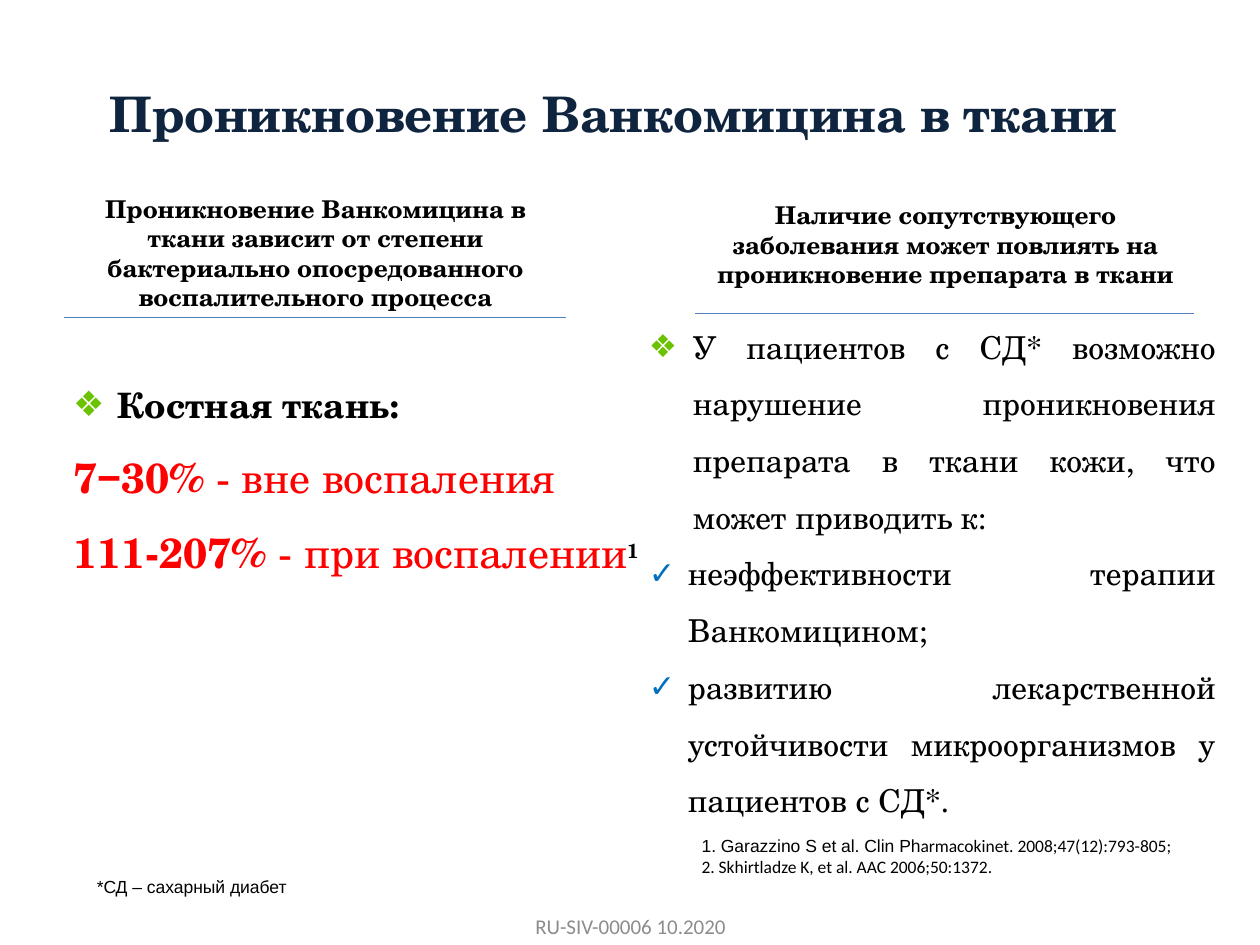
from dataclasses import dataclass, field

from lxml.etree import SubElement
from pptx import Presentation
from pptx.dml.color import RGBColor
from pptx.enum.shapes import MSO_CONNECTOR
from pptx.enum.text import MSO_ANCHOR as ANCHOR, PP_ALIGN as ALIGN
from pptx.oxml.ns import qn
from pptx.util import Inches, Pt

NAVY = RGBColor(0x0F, 0x24, 0x3E)
BLACK = RGBColor(0, 0, 0)
RED = RGBColor(0xFF, 0, 0)
GRAY = RGBColor(0x8C, 0x8C, 0x8C)
GREEN = RGBColor(0x6B, 0xC2, 0x00)
BLUE = RGBColor(0x00, 0x70, 0xC0)
RULE = RGBColor(0x4F, 0x81, 0xBD)
SERIF, ARIAL, CALIBRI = "TeX Gyre Schola", "Arial", "Calibri"


@dataclass
class Run:
    text: str
    size: float
    font: str = SERIF
    color: RGBColor = BLACK
    bold: bool = False
    superscript: bool = False


@dataclass
class Para:
    runs: list[Run]
    format: dict = field(default_factory=dict)
    margin: float = 0
    indent: float = 0
    bullet: str = ""
    bullet_color: RGBColor = GREEN


@dataclass
class Box:
    at: tuple[float, float, float, float]
    paras: list[Para]
    insets: tuple[float, float, float, float] = (0.1, 0.05, 0.1, 0.05)
    anchor: ANCHOR = ANCHOR.TOP


def add_run(p, run: Run) -> None:
    r = p.add_run()
    r.text = run.text
    values = {"size": Pt(run.size), "name": run.font, "bold": run.bold}
    for name, value in values.items():
        setattr(r.font, name, value)
    r.font.color.rgb = run.color
    if run.superscript:
        r.font._element.set("baseline", "30000")


def set_bullet(p, para: Para) -> None:
    pPr = p._p.get_or_add_pPr()
    pPr.set("marL", str(Inches(para.margin)))
    pPr.set("indent", str(Inches(para.indent)))
    if para.bullet:
        color = SubElement(pPr, qn("a:buClr"))
        SubElement(color, qn("a:srgbClr"), val=str(para.bullet_color))
        # A Unicode text font keeps the bullet characters as written
        SubElement(pPr, qn("a:buFont"), typeface=ARIAL)
        SubElement(pPr, qn("a:buChar"), char=para.bullet)


def add_box(s, box: Box) -> None:
    tf = s.shapes.add_textbox(*map(Inches, box.at)).text_frame
    tf.word_wrap = True
    tf.vertical_anchor = box.anchor
    sides = ("margin_left", "margin_top", "margin_right", "margin_bottom")
    for side, inset in zip(sides, box.insets):
        setattr(tf, side, Inches(inset))
    for i, para in enumerate(box.paras):
        p = tf.add_paragraph() if i else tf.paragraphs[0]
        for name, value in para.format.items():
            setattr(p, name, value)
        set_bullet(p, para)
        for run in para.runs:
            add_run(p, run)


def add_rule(s, left: float, right: float, y: float) -> None:
    line = s.shapes.add_connector(
        MSO_CONNECTOR.STRAIGHT, Inches(left), Inches(y), Inches(right), Inches(y))
    line.line.color.rgb = RULE
    line.line.width = Pt(0.75)
    SubElement(line._element.spPr, qn("a:effectLst"))


def heading(text: str, **spacing) -> Para:
    return Para([Run(text, 14, bold=True)], {"alignment": ALIGN.CENTER, **spacing})


def finding(share: str, condition: str, *notes: Run) -> Para:
    runs = [Run(share, 24, color=RED, bold=True), Run(condition, 24, color=RED), *notes]
    return Para(runs, SPACED, 0.46)


def effect(text: str) -> Para:
    return Para([Run(text, 18)], JUSTIFIED, 0.77, -0.31, "✓", BLUE)


SPACED = {"line_spacing": 1.5}
JUSTIFIED = {"alignment": ALIGN.JUSTIFY, **SPACED}
HEADING_INSETS = (0, 0, 0, 0.04)
BODY_INSETS = (0, 0.12, 0, 0)

BOXES = [
    # Title
    Box((0.77, 0.31, 8.73, 1.17),
        [Para([Run("Проникновение Ванкомицина в ткани", 28, color=NAVY, bold=True)])],
        anchor=ANCHOR.MIDDLE),
    # Column headings
    Box((0.52, 1.54, 3.97, 0.79),
        [heading("Проникновение Ванкомицина в ткани зависит от степени "
                 "бактериально опосредованного воспалительного процесса")],
        HEADING_INSETS),
    Box((5.52, 1.59, 3.97, 0.3),
        [heading("Наличие сопутствующего заболевания может повлиять на "
                 "проникновение препарата в ткани",
                 space_before=Pt(3), space_after=Pt(6))],
        HEADING_INSETS),
    # Left column: bone tissue
    Box((0.12, 2.76, 5.67, 4.15),
        [Para([Run("Костная ткань:", 20, bold=True)], SPACED, 0.81, -0.35, "❖"),
         finding("7‒30% ", "- вне воспаления"),
         finding("111-207% ", "- при воспалении",
                 Run("1", 20, bold=True, superscript=True))],
        BODY_INSETS),
    # Right column: patients with diabetes
    Box((4.69, 2.33, 4.96, 3.51),
        [Para([Run("У пациентов с СД* возможно нарушение проникновения "
                   "препарата в ткани кожи, что может приводить к:", 18)],
              JUSTIFIED, 0.81, -0.35, "❖"),
         effect("неэффективности терапии Ванкомицином;"),
         effect("развитию лекарственной устойчивости микроорганизмов "
                "у пациентов с СД*.")],
        BODY_INSETS),
    # References, footnote and footer
    Box((5.47, 6.58, 4.17, 0.44),
        [Para([Run("1. Garazzino S et al. Clin Ph", 10, ARIAL),
               Run("armacokinet. 2008;47(12):793-805;", 10, CALIBRI)]),
         Para([Run("2. Skhirtladze K, et al. AAC 2006;50:1372.", 10, CALIBRI)])]),
    Box((0.67, 6.9, 1.97, 0.27), [Para([Run("*СД – сахарный диабет", 10, ARIAL)])]),
    Box((3.42, 7.15, 3.17, 0.4),
        [Para([Run("RU-SIV-00006 10.2020", 12, CALIBRI, GRAY)],
              {"alignment": ALIGN.CENTER})],
        anchor=ANCHOR.MIDDLE),
]


def main() -> None:
    prs = Presentation()
    prs.slide_width, prs.slide_height = Inches(10), Inches(7.5)
    s = prs.slides.add_slide(prs.slide_layouts[6])
    for box in BOXES:
        add_box(s, box)
    # Rules under the column headings
    add_rule(s, 0.51, 4.49, 2.52)
    add_rule(s, 5.52, 9.48, 2.49)
    prs.save("out.pptx")


if __name__ == "__main__":
    main()
